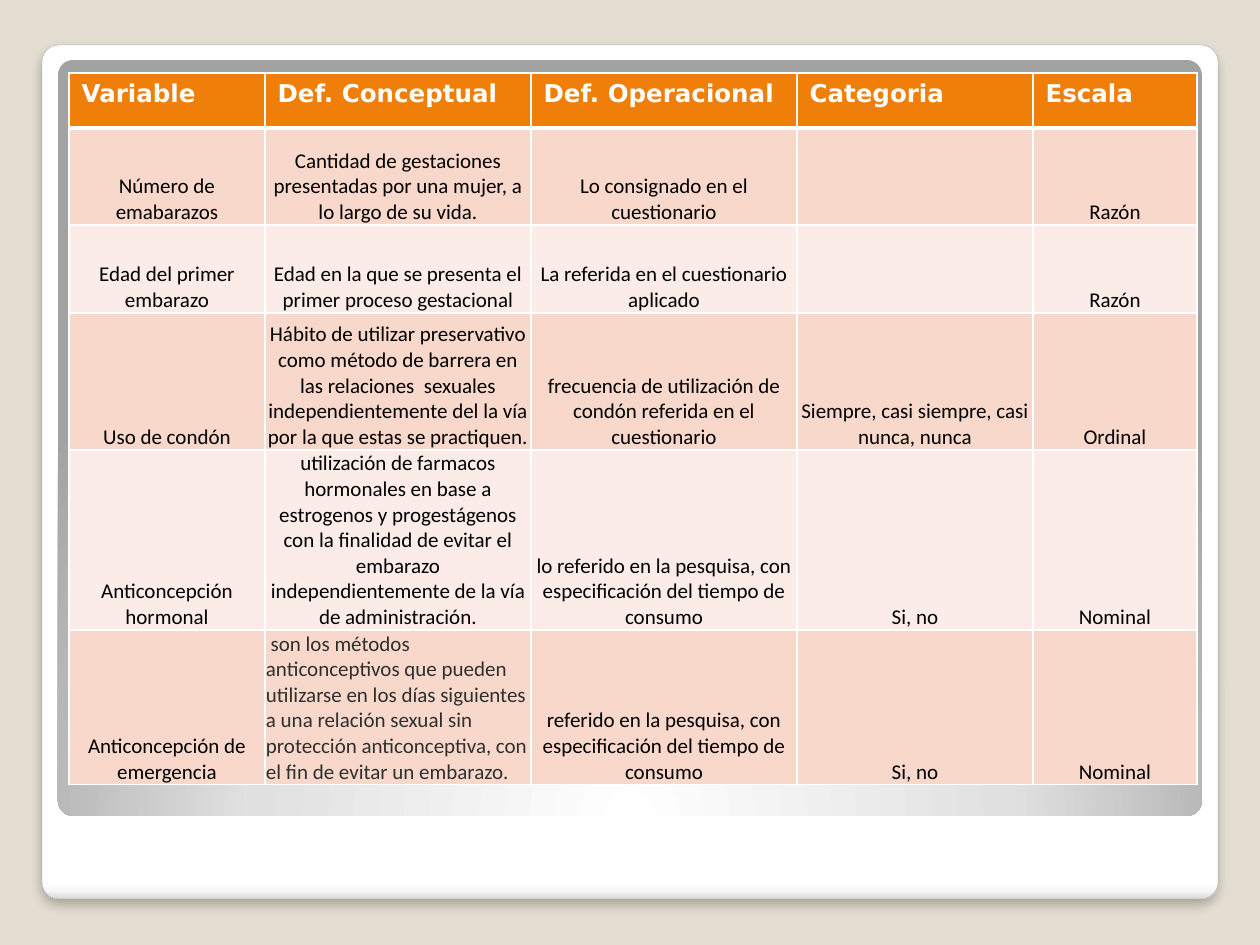
from itertools import cycle
from lxml.etree import SubElement
from pptx import Presentation
from pptx.dml.color import RGBColor
from pptx.enum.shapes import MSO_SHAPE
from pptx.enum.text import MSO_ANCHOR, PP_ALIGN
from pptx.oxml.ns import qn
from pptx.util import Pt

PX = 914400 / 126
HEADINGS = ["Variable", "Def. Conceptual", "Def. Operacional", "Categoria", "Escala"]
VARIABLES = [
    ["Número de emabarazos",
     "Cantidad de gestaciones presentadas por una mujer, a lo largo de su vida.",
     "Lo consignado en el cuestionario", "", "Razón"],
    ["Edad del primer embarazo",
     "Edad en la que se presenta el primer proceso gestacional",
     "La referida en el cuestionario aplicado", "", "Razón"],
    ["Uso de condón",
     "Hábito de utilizar preservativo como método de barrera en las relaciones  sexuales "
     "independientemente del la vía por la que estas se practiquen.",
     "frecuencia de utilización de condón referida en el cuestionario",
     "Siempre, casi siempre, casi nunca, nunca", "Ordinal"],
    ["Anticoncepción hormonal",
     "utilización de farmacos hormonales en base a estrogenos y progestágenos con la finalidad "
     "de evitar el embarazo independientemente de la vía de administración.",
     "lo referido en la pesquisa, con especificación del tiempo de consumo", "Si, no", "Nominal"],
    ["Anticoncepción de emergencia",
     " son los métodos anticonceptivos que pueden utilizarse en los días siguientes a una "
     "relación sexual sin protección anticonceptiva, con el fin de evitar un embarazo.",
     "referido en la pesquisa, con especificación del tiempo de consumo", "Si, no", "Nominal"],
]


def px(length):
    return round(length * PX)


def rgb(value):
    return RGBColor.from_string(value)


def apply(target, formats):
    for name, value in formats.items():
        setattr(target, name, value)


def child(parent, tag, **attributes):
    return SubElement(parent, qn(tag), {key: str(value) for key, value in attributes.items()})


class SlideBuilder:
    heading_font = {"name": "DejaVu Sans", "size": Pt(14), "bold": True}
    body_font = {"name": "Calibri", "size": Pt(12), "bold": False}
    body_cell = {"vertical_anchor": MSO_ANCHOR.BOTTOM, "margin_left": px(1),
                 "margin_right": px(1), "margin_top": px(1), "margin_bottom": 0}

    def __init__(self, deck, background):
        self.slide = deck.slides.add_slide(deck.slide_layouts[6])
        fill = self.slide.background.fill
        fill.solid()
        fill.fore_color.rgb = rgb(background)

    def panel(self, box, stops, circle=None, outline=None, shadow=None):
        panel = self.slide.shapes.add_shape(MSO_SHAPE.ROUNDED_RECTANGLE, *map(px, box))
        panel.adjustments[0] = 0.02
        panel.shadow.inherit = False
        panel.fill.background()
        properties = panel._element.spPr
        empty_fill = properties.find(qn("a:noFill"))
        gradient = child(properties, "a:gradFill", rotWithShape=1)
        properties.replace(empty_fill, gradient)
        stop_list = child(gradient, "a:gsLst")
        for position, color in stops:
            child(child(stop_list, "a:gs", pos=position * 1000), "a:srgbClr", val=color)
        if circle:
            child(child(gradient, "a:path", path="circle"), "a:fillToRect", **circle)
        else:
            child(gradient, "a:lin", ang=5400000, scaled=0)
        if outline:
            panel.line.color.rgb = rgb(outline)
            panel.line.width = Pt(0.16)
        else:
            panel.line.fill.background()
        if shadow:
            effects = properties.find(qn("a:effectLst"))
            outer = child(effects, "a:outerShdw", algn="t", rotWithShape=0, **shadow)
            child(child(outer, "a:srgbClr", val="000000"), "a:alpha", val=25000)

    def borders(self, cell, bottom=1, top=1):
        properties = cell._tc.get_or_add_tcPr()
        for side, width in {"L": 1, "R": 1, "T": top, "B": bottom}.items():
            line = child(properties, f"a:ln{side}", w=Pt(width))
            child(child(line, "a:solidFill"), "a:srgbClr", val="FFFFFF")

    def cell(self, cell, text, fill, font, color, align, **border_widths):
        self.borders(cell, **border_widths)
        cell.fill.solid()
        cell.fill.fore_color.rgb = rgb(fill)
        cell.text = text
        paragraph = cell.text_frame.paragraphs[0]
        paragraph.alignment = align
        apply(paragraph.font, font)
        for run in paragraph.runs:
            apply(run.font, font)
            run.font.color.rgb = rgb(color)

    def table(self, left, top, widths, heights, headings, records):
        frame = self.slide.shapes.add_table(
            len(heights), len(widths), px(left), px(top), px(sum(widths)), px(sum(heights)))
        table = frame.table
        table.horz_banding = False
        for column, width in zip(table.columns, widths):
            column.width = px(width)
        for row, height in zip(table.rows, heights):
            row.height = px(height)
        for column, heading in enumerate(headings):
            self.cell(table.cell(0, column), heading, "F07F09", self.heading_font,
                      "FFFFFF", PP_ALIGN.LEFT, bottom=3)
        for row, (record, band) in enumerate(zip(records, cycle(["F9D8CC", "FCECE7"])), 1):
            for column, text in enumerate(record):
                quoted = row == len(records) and column == 1
                cell = table.cell(row, column)
                apply(cell, self.body_cell)
                self.cell(cell, text, band, self.body_font,
                          "2F2F2F" if quoted else "000000",
                          PP_ALIGN.LEFT if quoted else PP_ALIGN.CENTER,
                          top=3 if row == 1 else 1)


def main():
    deck = Presentation()
    deck.slide_width, deck.slide_height = px(1260), px(945)
    builder = SlideBuilder(deck, "E3DED1")
    builder.panel((42, 45, 1176, 854),
                  [(0, "FFFFFF"), (98, "FFFFFF"), (99, "F7F7F7"), (100, "DADADA")],
                  outline="A4A4A4",
                  shadow={"blurRad": Pt(6), "dist": Pt(4), "dir": 5400000})
    builder.panel((58, 60, 1144, 756),
                  [(0, "FFFFFF"), (55, "E1E1E1"), (100, "A2A2A2")],
                  circle={"l": 50000, "t": 175000, "r": 50000, "b": -75000})
    builder.table(69, 73, [196, 266, 266, 236, 164], [55, 97, 88, 137, 158, 147],
                  HEADINGS, VARIABLES)
    deck.save("out.pptx")


if __name__ == "__main__":
    main()
